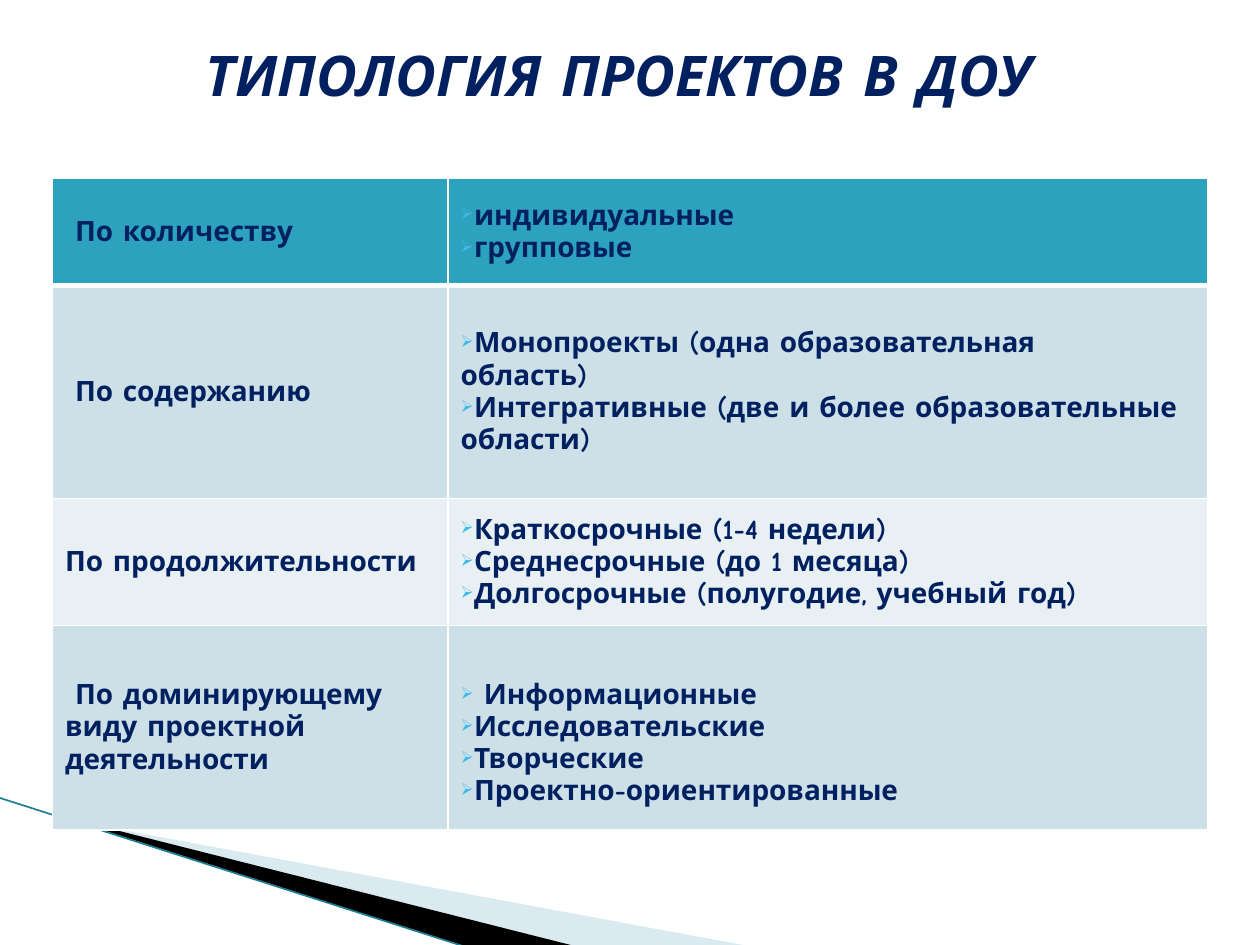
import pptx
import pptx.dml.color
import pptx.enum.shapes
import pptx.enum.text
import pptx.oxml.ns
import pptx.util
from dataclasses import dataclass
from lxml import etree

Inches = pptx.util.Inches
Pt = pptx.util.Pt
qn = pptx.oxml.ns.qn
MIDDLE = pptx.enum.text.MSO_ANCHOR.MIDDLE
LEFT_EDGE = 5 / 12
TABLE_TOP = 17 / 12


@dataclass(frozen=True)
class Theme:
    font: str = "Comic Neue"
    title_size: int = 32
    body_size: int = 16
    text: str = "002060"
    bullet: str = "44B9E8"
    header: str = "2DA2BF"
    band_dark: str = "CDE0E8"
    band_light: str = "E8F0F4"
    border: str = "FFFFFF"
    wedge_light: str = "A0CBDC"
    wedge_dark: str = "000000"
    edge: str = "1F7F94"


def rgb(value):
    return pptx.dml.color.RGBColor.from_string(value)


def add_color(parent, value):
    return etree.SubElement(parent, qn("a:srgbClr"), val=value)


def reframe(shape, left, top, width, height):
    """Give a freeform a new frame while its outline stays in place."""
    shift = {"x": shape.left - left, "y": shape.top - top}
    outline = shape._element.spPr.find(".//" + qn("a:path"))
    outline.set("w", str(width))
    outline.set("h", str(height))
    for point in outline.iter(qn("a:pt")):
        for axis, distance in shift.items():
            point.set(axis, str(int(point.get(axis)) + distance))
    shape.left, shape.top, shape.width, shape.height = left, top, width, height


def write_text(paragraph, text, *, font, size, color, bold=True, italic=False,
               align=None, bullet=None):
    """Fill a paragraph; bullet is the colour of its arrow mark."""
    paragraph.text = text
    if bullet:
        properties = paragraph._p.get_or_add_pPr()
        add_color(etree.SubElement(properties, qn("a:buClr")), bullet)
        etree.SubElement(properties, qn("a:buSzPct"), val="60000")
        etree.SubElement(properties, qn("a:buChar"), char="➢")
    if align is not None:
        paragraph.alignment = align
    for run in paragraph.runs:
        run.font.name = font
        run.font.size = Pt(size)
        run.font.color.rgb = rgb(color)
        run.font.bold = bold
        run.font.italic = italic


class SlideBuilder:
    def __init__(self, slide, theme):
        self.slide = slide
        self.theme = theme

    def wedge(self, points, frame, color, opacity=None):
        corners = [(Inches(x), Inches(y)) for x, y in points]
        builder = self.slide.shapes.build_freeform(*corners[0])
        builder.add_line_segments(corners[1:], close=True)
        wedge = builder.convert_to_shape()
        reframe(wedge, *map(Inches, frame))
        wedge.shadow.inherit = False
        wedge.line.fill.background()
        wedge.fill.solid()
        wedge.fill.fore_color.rgb = rgb(color)
        if opacity is not None:
            fill_color = wedge._element.spPr.find(".//" + qn("a:srgbClr"))
            etree.SubElement(fill_color, qn("a:alpha"), val=str(opacity * 1000))

    def line(self, start, end, color, width):
        ends = [Inches(v) for v in (*start, *end)]
        edge = self.slide.shapes.add_connector(
            pptx.enum.shapes.MSO_CONNECTOR.STRAIGHT, *ends)
        edge.line.color.rgb = rgb(color)
        edge.line.width = Pt(width)
        etree.SubElement(edge._element.spPr, qn("a:effectLst"))

    def title(self, text, left, top, width, height):
        box = self.slide.shapes.add_textbox(*map(Inches, (left, top, width, height)))
        frame = box.text_frame
        frame.word_wrap = True
        frame.vertical_anchor = MIDDLE
        write_text(frame.paragraphs[0], text, font=self.theme.font,
                   size=self.theme.title_size, color=self.theme.text, italic=True,
                   align=pptx.enum.text.PP_ALIGN.CENTER)

    def cell(self, cell, lines, fill, bullet=None, top_width=1, bottom_width=1):
        properties = cell._tc.get_or_add_tcPr()
        widths = {"lnL": 1, "lnR": 1, "lnT": top_width, "lnB": bottom_width}
        for side, width in widths.items():
            border = etree.SubElement(properties, qn("a:" + side), w=str(Pt(width)))
            add_color(etree.SubElement(border, qn("a:solidFill")), self.theme.border)
        cell.fill.solid()
        cell.fill.fore_color.rgb = rgb(fill)
        cell.vertical_anchor = MIDDLE
        frame = cell.text_frame
        for index, text in enumerate(lines):
            paragraph = frame.add_paragraph() if index else frame.paragraphs[0]
            write_text(paragraph, text, font=self.theme.font,
                       size=self.theme.body_size, color=self.theme.text, bullet=bullet)

    def table(self, rows, left, top, column_widths, row_heights):
        table = self.slide.shapes.add_table(
            len(rows), len(column_widths), Inches(left), Inches(top),
            Inches(sum(column_widths)), Inches(sum(row_heights))).table
        for column, width in zip(table.columns, column_widths):
            column.width = Inches(width)
        bands = (self.theme.band_light, self.theme.band_dark)
        for index, (criterion, kinds) in enumerate(rows):
            table.rows[index].height = Inches(row_heights[index])
            fill = bands[index % 2] if index else self.theme.header
            rule = {"top_width": 3 if index == 1 else 1,
                    "bottom_width": 3 if index == 0 else 1}
            self.cell(table.cell(index, 0), [criterion], fill, **rule)
            self.cell(table.cell(index, 1), kinds, fill,
                      bullet=self.theme.bullet, **rule)
        return table


PROJECT_TYPES = [
    (" По количеству", ["индивидуальные", "групповые"]),
    (" По содержанию", ["Монопроекты (одна образовательная\vобласть)",
                        "Интегративные (две и более образовательные области)"]),
    ("По продолжительности", ["Краткосрочные (1-4 недели)",
                              "Среднесрочные (до 1 месяца)",
                              "Долгосрочные (полугодие, учебный год)"]),
    (" По доминирующему виду проектной деятельности",
     [" Информационные", "Исследовательские", "Творческие",
      "Проектно-ориентированные"]),
]


def main():
    presentation = pptx.Presentation()
    presentation.slide_width = Inches(10)
    presentation.slide_height = Inches(7.5)
    theme = Theme()
    builder = SlideBuilder(
        presentation.slides.add_slide(presentation.slide_layouts[6]), theme)

    builder.wedge([(0.55, 6.51), (5.95, 7.51), (4.56, 7.51), (0.55, 6.5)],
                  (0.78, 5.47, 4.16, 1.58), theme.wedge_light, opacity=40)
    builder.wedge([(0.53, 6.49), (4.57, 7.51), (3.72, 7.52), (0.54, 6.5)],
                  (-0.06, 6.33, 4.16, 0.92), theme.wedge_dark)
    builder.line((-0.01, 6.33), (3.71, 7.52), theme.edge, 0.95)

    types_table = builder.table(PROJECT_TYPES, LEFT_EDGE, TABLE_TOP, [3.14, 6.03],
                                [0.85, 1.69, 1.01, 1.62])
    types_table.cell(3, 1).margin_top = Inches(0.3)
    builder.title("ТИПОЛОГИЯ ПРОЕКТОВ В ДОУ", LEFT_EDGE, 0, 9, 1.17)
    presentation.save("out.pptx")


if __name__ == "__main__":
    main()
